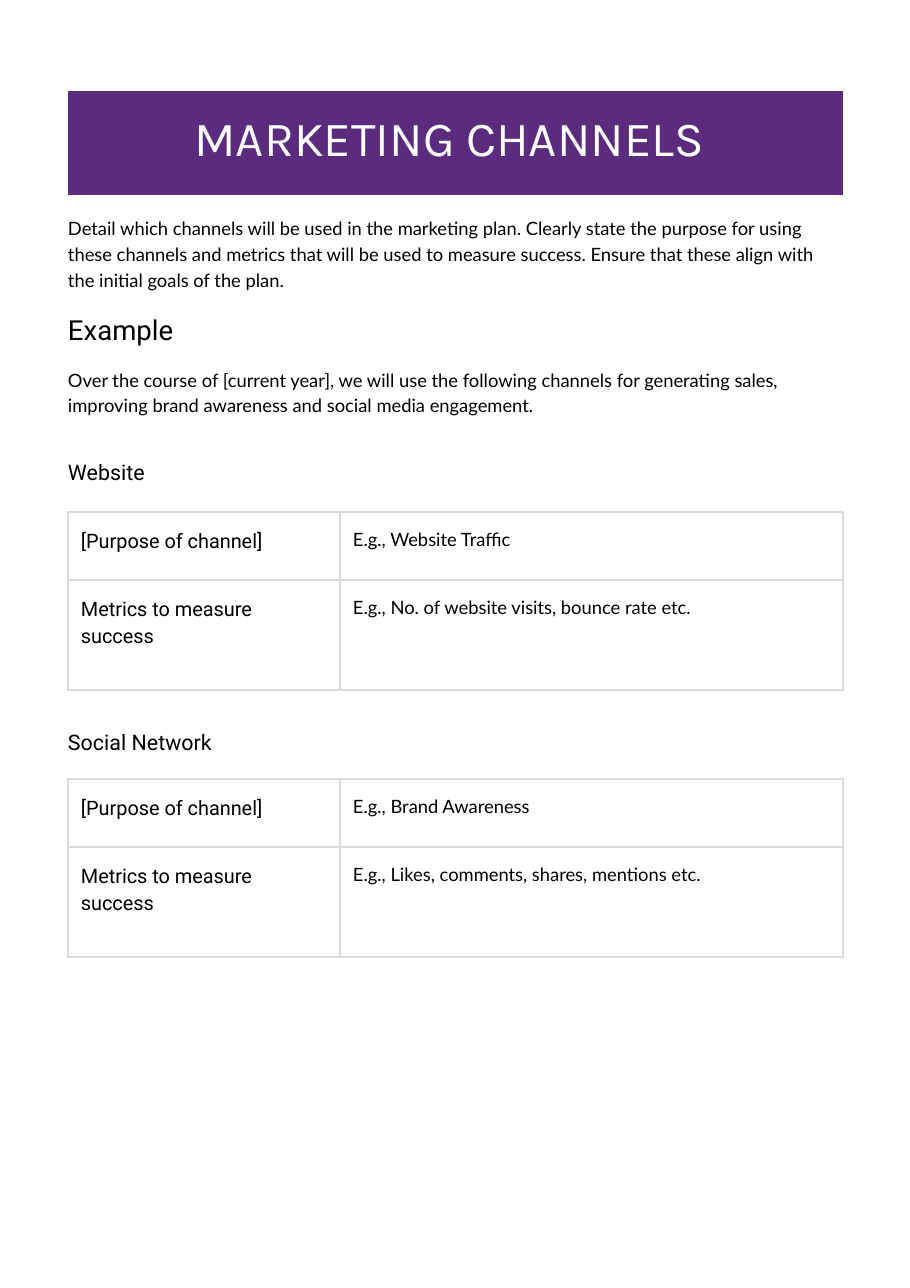
import lxml.etree
import pptx
import pptx.dml.color
import pptx.enum.text
import pptx.oxml.ns
import pptx.util

PX = 914400 / 110.2
COLORS = {"purple": "5B2C7D", "white": "FFFFFF", "black": "000000", "border": "DBDBDB"}
LEFT, WIDTH = 68, 775
COLUMN_WIDTHS = [272, 503]
ROW_HEIGHTS = [68, 110]
LINE_SPACING = 1.4


def px(length):
    """Convert px to EMU."""
    return pptx.util.Emu(round(length * PX))


def rgb(name):
    """Look up a named colour."""
    return pptx.dml.color.RGBColor.from_string(COLORS[name])


def write(text_frame, text, font, size, color="black"):
    """Write one paragraph with line spacing in proportion to its size."""
    paragraph = text_frame.paragraphs[0]
    paragraph.text = text
    paragraph.line_spacing = pptx.util.Pt(round(size * LINE_SPACING, 1))
    paragraph.font.name = font
    paragraph.font.size = pptx.util.Pt(size)
    paragraph.font.color.rgb = rgb(color)
    return paragraph


def add_text(slide, top, height, text, font, size):
    """Add a full-width text block without insets."""
    text_frame = slide.shapes.add_textbox(px(LEFT), px(top), px(WIDTH), px(height)).text_frame
    text_frame.word_wrap = True
    text_frame.margin_left = text_frame.margin_right = 0
    text_frame.margin_top = text_frame.margin_bottom = 0
    write(text_frame, text, font, size)


def set_borders(cell, color=None):
    """Draw all four cell borders, or remove them when no colour is given."""
    properties = cell._tc.get_or_add_tcPr()
    qn = pptx.oxml.ns.qn
    for side in ("a:lnL", "a:lnR", "a:lnT", "a:lnB"):
        line = lxml.etree.SubElement(properties, qn(side), w=str(pptx.util.Pt(1.5)))
        if color is None:
            lxml.etree.SubElement(line, qn("a:noFill"))
        else:
            fill = lxml.etree.SubElement(line, qn("a:solidFill"))
            lxml.etree.SubElement(fill, qn("a:srgbClr"), val=COLORS[color])


def add_grid(slide, top, column_widths, row_heights, inset, border=None):
    """Add a plain table with even cell insets."""
    table = slide.shapes.add_table(
        len(row_heights), len(column_widths), px(LEFT), px(top),
        px(sum(column_widths)), px(sum(row_heights))).table
    table.first_row = table.horz_banding = False
    for column, width in zip(table.columns, column_widths):
        column.width = px(width)
    for row, height in zip(table.rows, row_heights):
        row.height = px(height)
    for cell in table.iter_cells():
        cell.margin_left = cell.margin_right = px(inset)
        cell.margin_top = cell.margin_bottom = px(inset)
        set_borders(cell, border)
        cell.fill.background()
    return table


def add_banner(slide, top, height, title):
    """Add the purple title banner."""
    cell = add_grid(slide, top, [WIDTH], [height], 9).cell(0, 0)
    cell.fill.solid()
    cell.fill.fore_color.rgb = rgb("purple")
    paragraph = write(cell.text_frame, title, "Karla", 32, "white")
    paragraph.alignment = pptx.enum.text.PP_ALIGN.CENTER


def add_channel(slide, top, table_top, name, purpose, metrics):
    """Add a channel heading and its table of purpose and metrics."""
    add_text(slide, top, 30, name, "Roboto", 14)
    table = add_grid(slide, table_top, COLUMN_WIDTHS, ROW_HEIGHTS, 13, "border")
    rows = [("[Purpose of channel]", purpose), ("Metrics to measure success", metrics)]
    for index, (label, example) in enumerate(rows):
        write(table.cell(index, 0).text_frame, label, "Roboto", 13)
        write(table.cell(index, 1).text_frame, example, "Lato", 12)


def main():
    """Build the marketing channels page."""
    presentation = pptx.Presentation()
    presentation.slide_width, presentation.slide_height = px(910), px(1288)
    slide = presentation.slides.add_slide(presentation.slide_layouts[6])
    add_banner(slide, 91, 104, "MARKETING CHANNELS ")
    add_text(slide, 214, 99,
             "Detail which channels will be used in the marketing plan. Clearly state the "
             "purpose for using these channels and metrics that will be used to measure "
             "success. Ensure that these align with the initial goals of the plan.", "Lato", 12)
    add_text(slide, 307, 39, "Example", "Roboto", 18)
    add_text(slide, 365, 75,
             "Over the course of [current year], we will use the following channels for "
             "generating sales, improving brand awareness and social media engagement.",
             "Lato", 12)
    add_channel(slide, 455, 512, "Website", "E.g., Website Traffic",
                "E.g., No. of website visits, bounce rate etc.")
    add_channel(slide, 725, 779, "Social Network", "E.g., Brand Awareness",
                "E.g., Likes, comments, shares, mentions etc.")
    presentation.save("out.pptx")


if __name__ == "__main__":
    main()
